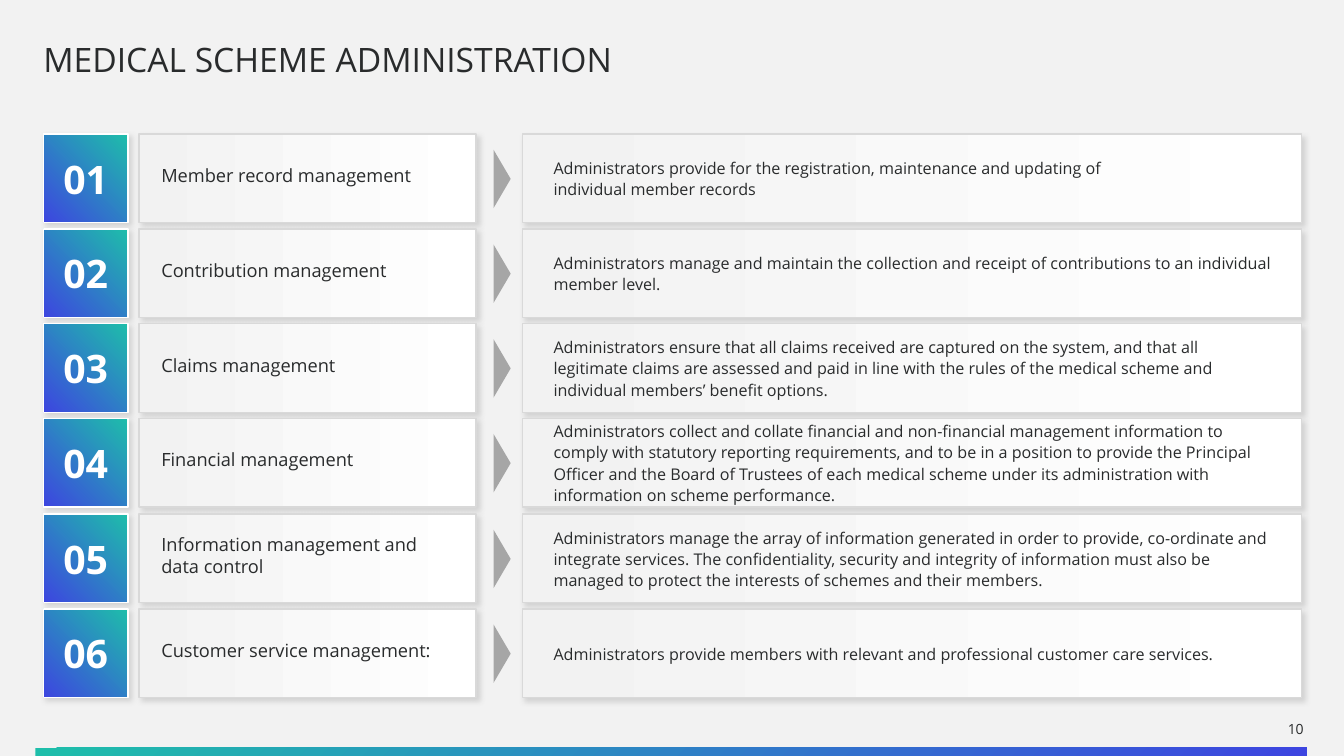
from dataclasses import dataclass

import lxml.etree
import pptx
import pptx.dml.color
import pptx.enum.shapes
import pptx.enum.text
import pptx.oxml.ns
import pptx.util

Inches = pptx.util.Inches
Shape = pptx.enum.shapes.MSO_SHAPE
Align = pptx.enum.text.PP_ALIGN
Anchor = pptx.enum.text.MSO_ANCHOR

FONT = "Open Sans"
COLORS = {
    "background": "F2F2F2",
    "text": "292B2C",
    "white": "FFFFFF",
    "border": "D9D9D9",
    "gray": "A6A6A6",
    "teal": "1EBEAA",
    "blue": "3D45E0",
}
FIRST_TOP = 1.33
ROW_PITCH = 0.94
ROW_HEIGHT = 0.88
LOWER_ROWS_SHIFT = 0.01


@dataclass(frozen=True)
class Duty:
    name: str
    description: str
    lines: int


@dataclass(frozen=True)
class Area:
    left: float
    top: float
    width: float
    height: float

    def lengths(self) -> list[pptx.util.Length]:
        return [Inches(side) for side in (self.left, self.top, self.width, self.height)]


@dataclass(frozen=True)
class TextStyle:
    size: float
    color: str = "text"
    bold: bool = False
    align: Align = Align.LEFT
    anchor: Anchor = Anchor.MIDDLE
    spacing: float = 1.0
    margins: tuple[float, float, float, float] = (0, 0, 0, 0)


@dataclass(frozen=True)
class Gradient:
    start: str
    end: str
    angle: float


TITLE = TextStyle(24, spacing=0.9)
PAGE_NUMBER = TextStyle(10, align=Align.RIGHT, anchor=Anchor.TOP)
NUMBER = TextStyle(28, "white", True, Align.CENTER, margins=(0.04, 0.04, 0.04, 0.04))
LABEL = TextStyle(13, margins=(0.05, 0, 0.05, 0.05))
DESCRIPTION = TextStyle(11.5, spacing=1.1, margins=(0.05, 0.04, 0.05, 0.05))

TILE_FILL = Gradient("teal", "blue", 225)
PANEL_FILL = Gradient("background", "white", 0)
BAR_FILL = Gradient("teal", "blue", 315)

DUTIES = [
    Duty("Member record management",
         "Administrators provide for the registration, maintenance and updating of\n"
         "individual member records", 2),
    Duty("Contribution management",
         "Administrators manage and maintain the collection and receipt of contributions "
         "to an individual member level.", 2),
    Duty("Claims management",
         "Administrators ensure that all claims received are captured on the system, and "
         "that all legitimate claims are assessed and paid in line with the rules of the "
         "medical scheme and individual members’ benefit options.", 3),
    Duty("Financial management",
         "Administrators collect and collate financial and non-financial management "
         "information to comply with statutory reporting requirements, and to be in a "
         "position to provide the Principal Officer and the Board of Trustees of each "
         "medical scheme under its administration with information on scheme performance.", 4),
    Duty("Information management and data control",
         "Administrators manage the array of information generated in order to provide, "
         "co-ordinate and integrate services. The confidentiality, security and integrity "
         "of information must also be managed to protect the interests of schemes and "
         "their members.", 3),
    Duty("Customer service management:",
         "Administrators provide members with relevant and professional customer care "
         "services.", 1),
]


def rgb(name: str) -> pptx.dml.color.RGBColor:
    return pptx.dml.color.RGBColor.from_string(COLORS[name])


def write_text(shape, text: str, style: TextStyle) -> None:
    frame = shape.text_frame
    frame.word_wrap = True
    frame.vertical_anchor = style.anchor
    (frame.margin_left, frame.margin_top,
     frame.margin_right, frame.margin_bottom) = map(Inches, style.margins)
    para = frame.paragraphs[0]
    para.text = text
    para.alignment = style.align
    para.line_spacing = style.spacing
    for span in para.runs:
        span.font.name = FONT
        span.font.size = pptx.util.Pt(style.size)
        span.font.bold = style.bold
        span.font.color.rgb = rgb(style.color)


def add_text(page, area: Area, text: str, style: TextStyle) -> None:
    write_text(page.shapes.add_textbox(*area.lengths()), text, style)


def add_gradient_box(page, area: Area, gradient: Gradient):
    box = page.shapes.add_shape(Shape.RECTANGLE, *area.lengths())
    box.shadow.inherit = False
    box.fill.gradient()
    box.fill.gradient_angle = gradient.angle
    for stop, name in zip(box.fill.gradient_stops, (gradient.start, gradient.end)):
        stop.color.rgb = rgb(name)
    box.line.fill.background()
    return box


def add_card(page, area: Area, gradient: Gradient, border: str):
    card = add_gradient_box(page, area, gradient)
    card.line.color.rgb = rgb(border)
    card.line.width = pptx.util.Pt(1)
    qn = pptx.oxml.ns.qn
    effects = card._element.spPr.find(qn("a:effectLst"))
    shadow = lxml.etree.SubElement(
        effects, qn("a:outerShdw"), blurRad=str(pptx.util.Pt(4)),
        dist=str(pptx.util.Pt(3)), dir="2700000", algn="tl", rotWithShape="0")
    color = lxml.etree.SubElement(shadow, qn("a:srgbClr"), val=COLORS["gray"])
    lxml.etree.SubElement(color, qn("a:alpha"), val="40000")
    return card


def add_pointer(page, center: float) -> None:
    area = Area(4.69, center - 0.08, 0.58, 0.17)
    pointer = page.shapes.add_shape(Shape.ISOSCELES_TRIANGLE, *area.lengths())
    pointer.rotation = 90
    pointer.shadow.inherit = False
    pointer.fill.solid()
    pointer.fill.fore_color.rgb = rgb("gray")
    pointer.line.fill.background()


def add_duty(page, index: int, duty: Duty) -> None:
    top = FIRST_TOP + index * ROW_PITCH + (LOWER_ROWS_SHIFT if index > 3 else 0)
    center = top + ROW_HEIGHT / 2
    tile = add_card(page, Area(0.43, top, 0.84, ROW_HEIGHT), TILE_FILL, "white")
    write_text(tile, f"{index + 1:02}", NUMBER)
    add_card(page, Area(1.38, top, 3.34, ROW_HEIGHT), PANEL_FILL, "border")
    add_card(page, Area(5.18, top, 7.73, ROW_HEIGHT), PANEL_FILL, "border")
    add_pointer(page, center)
    add_text(page, Area(1.55, top + 0.21, 3.05, 0.45), duty.name, LABEL)
    height = 0.05 + 0.2 * duty.lines
    add_text(page, Area(5.44, center - height / 2, 7.27, height),
             duty.description, DESCRIPTION)


def main() -> None:
    deck = pptx.Presentation()
    deck.slide_width, deck.slide_height = Inches(13.33), Inches(7.5)
    page = deck.slides.add_slide(deck.slide_layouts[6])
    page.background.fill.solid()
    page.background.fill.fore_color.rgb = rgb("background")
    add_text(page, Area(12.62, 7.15, 0.31, 0.17), "10", PAGE_NUMBER)
    add_gradient_box(page, Area(0.35, 7.42, 12.61, 0.08), BAR_FILL)
    add_text(page, Area(0.43, 0.43, 12.49, 0.37), "MEDICAL SCHEME ADMINISTRATION", TITLE)
    for index, duty in enumerate(DUTIES):
        add_duty(page, index, duty)
    deck.save("out.pptx")


if __name__ == "__main__":
    main()
